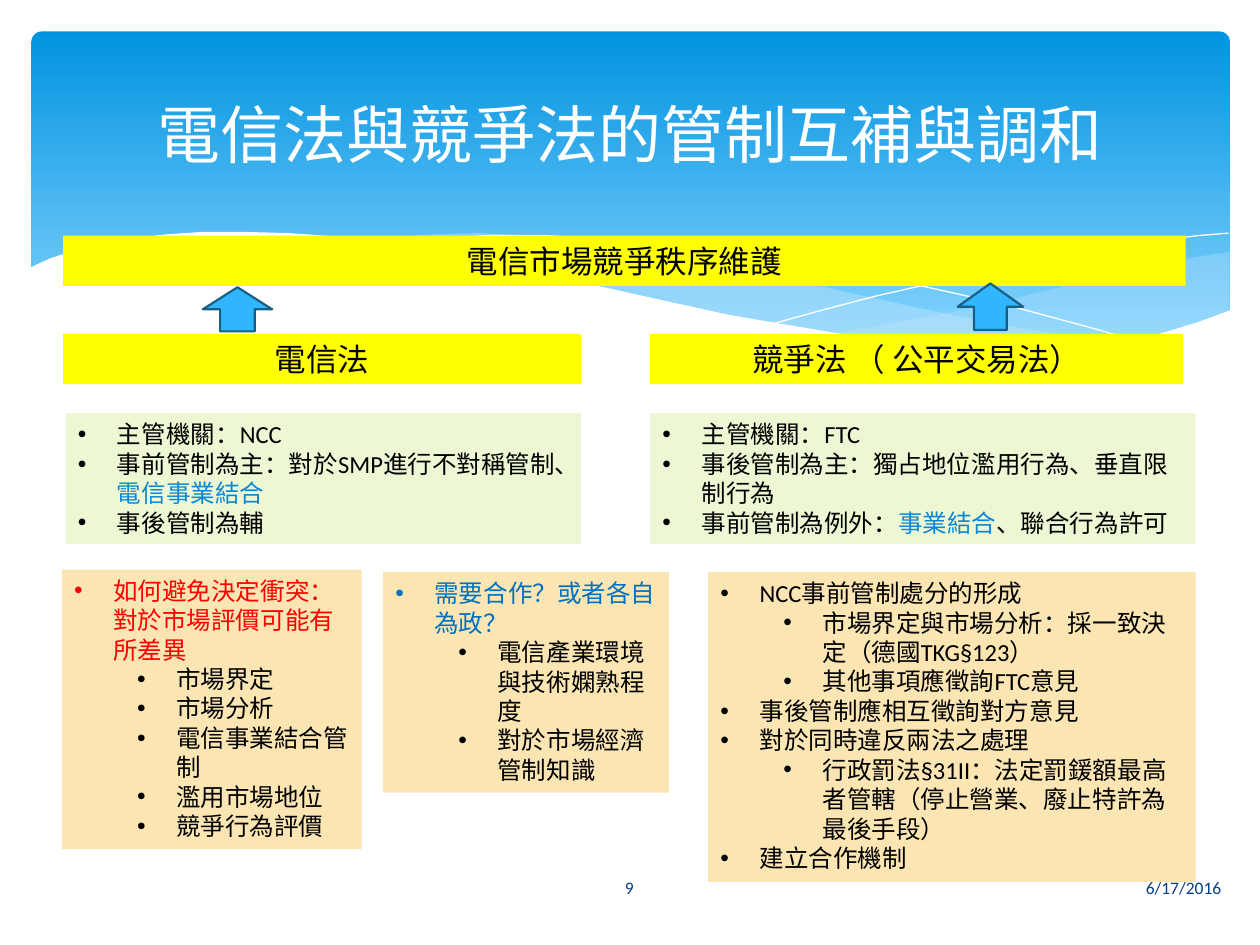
"""Build the slide on how telecom law and competition law complement each other."""
import pptx
import pptx.dml.color
import pptx.enum.shapes
import pptx.enum.text
import pptx.oxml.ns
import pptx.util
from lxml import etree

SHAPE = pptx.enum.shapes.MSO_SHAPE
ALIGN = pptx.enum.text.PP_ALIGN
ANCHOR = pptx.enum.text.MSO_ANCHOR
FIT = pptx.enum.text.MSO_AUTO_SIZE
Inches, Pt, qn = pptx.util.Inches, pptx.util.Pt, pptx.oxml.ns.qn
BLACK, WHITE, BLUE, NAVY = "000000", "FFFFFF", "0B87D6", "073E87"
YELLOW, GREEN, SAND = "FFFF00", "EDF7D3", "FBE6B3"

prs = pptx.Presentation()
prs.slide_width, prs.slide_height = Inches(10), Inches(7.5)
col, row = prs.slide_width / 100, prs.slide_height / 75
s = prs.slides.add_slide(prs.slide_layouts[5])


def rgb(value):
    return pptx.dml.color.RGBColor.from_string(value)


def add_box(kind, at, color):
    x, y, w, h = at
    sp = s.shapes.add_shape(kind, int(x * col), int(y * row), int(w * col), int(h * row))
    sp.shadow.inherit = False
    sp.fill.solid()
    sp.fill.fore_color.rgb = rgb(color)
    sp.line.fill.background()
    return sp


s.background.fill.solid()
s.background.fill.fore_color.rgb = rgb(WHITE)

banner = add_box(SHAPE.ROUNDED_RECTANGLE, (2.5, 2.5, 95.1, 27), "0293E0")
banner.adjustments[0] = 0.03
banner.fill.gradient()
banner.fill.gradient_angle = 270
for stop, (position, color) in zip(banner.fill.gradient_stops, [(0, "0293E0"), (0.9, "83D3FE")]):
    stop.position = position
    stop.color.rgb = rgb(color)

waves = [
    ("C6E7FC", 29, [
        (976, 200), (948, 204), (921, 210), (891, 216), (861, 223), (805, 237), (753, 248),
        (706, 257), (661, 265), (691, 269), (719, 272), (745, 275), (769, 277), (803, 278),
        (835, 277), (863, 275), (889, 272), (913, 267), (935, 262), (949, 257), (976, 247)]),
    ("C6E7FC", 40, [
        (893, 273), (866, 269), (807, 260), (741, 247), (668, 231), (629, 222), (584, 211),
        (555, 205), (528, 200), (502, 196), (465, 191), (420, 187), (380, 185), (344, 186),
        (313, 188), (286, 191), (323, 196), (362, 203), (404, 211), (449, 222), (530, 240),
        (584, 252), (634, 261), (680, 268), (722, 274), (761, 277), (796, 278), (838, 278),
        (867, 276), (893, 273)]),
    (None, 0, [
        (309, 195), (328, 192), (353, 189), (387, 187), (433, 187), (469, 189), (510, 192),
        (556, 197), (608, 204), (665, 213), (727, 226), (795, 241), (869, 261), (907, 272)]),
    (None, 0, [
        (613, 257), (653, 246), (695, 235), (748, 223), (806, 210), (866, 199), (910, 192),
        (951, 187), (975, 185)]),
    (WHITE, 100, [
        (977, 246), (950, 256), (920, 265), (887, 271), (850, 275), (809, 277), (778, 276),
        (744, 274), (708, 270), (668, 265), (626, 258), (579, 250), (529, 239), (475, 227),
        (418, 213), (365, 202), (316, 194), (271, 188), (230, 185), (193, 184), (161, 184),
        (132, 186), (106, 189), (85, 193), (67, 197), (52, 201), (40, 205), (29, 210),
        (23, 213), (23, 329), (977, 329)]),
]
for color, opacity, points in waves:
    pen = s.shapes.build_freeform(*points[0], scale=col / 10)
    pen.add_line_segments(points[1:], close=color is not None)
    wave = pen.convert_to_shape()
    wave.shadow.inherit = False
    if color:
        wave.fill.solid()
        wave.fill.fore_color.rgb = rgb(color)
        wave.line.fill.background()
        tint = wave.fill._xPr.find(qn("a:solidFill"))[0]
        etree.SubElement(tint, qn("a:alpha"), val=str(opacity * 1000))
    else:
        wave.fill.background()
        wave.line.color.rgb = rgb(WHITE)
        wave.line.width = Pt(0)

title = s.shapes.title
s.shapes._spTree.append(title._element)
title.left, title.top = int(5 * col), int(3.7 * row)
title.width, title.height = int(90 * col), int(13.7 * row)
labels = [(title, "電信法與競爭法的管制互補與調和", 36, WHITE, ALIGN.CENTER)]

for x, w, text, align in [(56.5, 41.4, "6/17/2016", ALIGN.RIGHT), (43.6, 12.7, "9", ALIGN.CENTER)]:
    sp = s.shapes.add_textbox(int(x * col), int(68.4 * row), int(w * col), int(4 * row))
    labels.append((sp, text, 10, NAVY, align))

for x, y, w, text in [(5, 18.7, 89.1, "電信市場競爭秩序維護"),
                      (5, 26.5, 41.1, "電信法"),
                      (51.6, 26.5, 42.3, "競爭法 （ 公平交易法）")]:
    sp = add_box(SHAPE.RECTANGLE, (x, y, w, 4), YELLOW)
    labels.append((sp, text, 18, BLACK, ALIGN.CENTER))

for sp, text, size, color, align in labels:
    tf = sp.text_frame
    tf.text = text
    tf.word_wrap = True
    tf.vertical_anchor = ANCHOR.MIDDLE
    p = tf.paragraphs[0]
    p.alignment = align
    font = p.runs[0].font
    font.name, font.size, font.color.rgb = "Calibri", Pt(size), rgb(color)

for at in [(16.1, 22.8, 5.5, 3.5), (76, 22.5, 5.2, 3.7)]:
    arrow = add_box(SHAPE.UP_ARROW, at, "31B6FD")
    arrow.line.color.rgb = rgb("195F84")
    arrow.line.width = Pt(1.25)

panels = [
    ((5.2, 32.8, 40.9, 10.4), GREEN, [
        (0, [("主管機關：NCC", BLACK)]),
        (0, [("事前管制為主：對於SMP進行不對稱管制、", BLACK), ("電信事業結合", BLUE)]),
        (0, [("事後管制為輔", BLACK)])]),
    ((51.6, 32.8, 43.3, 10.4), GREEN, [
        (0, [("主管機關：FTC", BLACK)]),
        (0, [("事後管制為主：獨占地位濫用行為、垂直限制行為", BLACK)]),
        (0, [("事前管制為例外：", BLACK), ("事業結合", BLUE), ("、聯合行為許可", BLACK)])]),
    ((4.9, 45.2, 23.8, 22.2), SAND, [
        (0, [("如何避免決定衝突：對於市場評價可能有所差異", "FF0000")]),
        (1, [("市場界定", BLACK)]),
        (1, [("市場分析", BLACK)]),
        (1, [("電信事業結合管制", BLACK)]),
        (1, [("濫用市場地位", BLACK)]),
        (1, [("競爭行為評價", BLACK)])]),
    ((30.4, 45.4, 22.7, 17.5), SAND, [
        (0, [("需要合作？或者各自為政？", "0070C0")]),
        (1, [("電信產業環境與技術嫻熟程度", BLACK)]),
        (1, [("對於市場經濟管制知識", BLACK)])]),
    ((56.2, 45.4, 38.7, 24.6), SAND, [
        (0, [("NCC事前管制處分的形成", BLACK)]),
        (1, [("市場界定與市場分析：採一致決定（德國TKG§123）", BLACK)]),
        (1, [("其他事項應徵詢FTC意見", BLACK)]),
        (0, [("事後管制應相互徵詢對方意見", BLACK)]),
        (0, [("對於同時違反兩法之處理", BLACK)]),
        (1, [("行政罰法§31II：法定罰鍰額最高者管轄（停止營業、廢止特許為最後手段）", BLACK)]),
        (0, [("建立合作機制", BLACK)])]),
]
for at, color, items in panels:
    tf = add_box(SHAPE.RECTANGLE, at, color).text_frame
    tf.word_wrap = True
    tf.auto_size = FIT.SHAPE_TO_FIT_TEXT
    tf.vertical_anchor = ANCHOR.TOP
    for i, (level, parts) in enumerate(items):
        p = tf.add_paragraph() if i else tf.paragraphs[0]
        p.level, p.alignment = level, ALIGN.LEFT
        pPr = p._p.get_or_add_pPr()
        pPr.set("marL", str(Inches(0.31 + 0.5 * level)))
        pPr.set("indent", str(-Inches(0.31)))
        etree.SubElement(pPr, qn("a:buFont"), typeface="Arial")
        etree.SubElement(pPr, qn("a:buChar"), char="•")
        for text, ink in parts:
            r = p.add_run()
            r.text = text
            r.font.name, r.font.size, r.font.color.rgb = "Calibri", Pt(14), rgb(ink)

prs.save("out.pptx")
